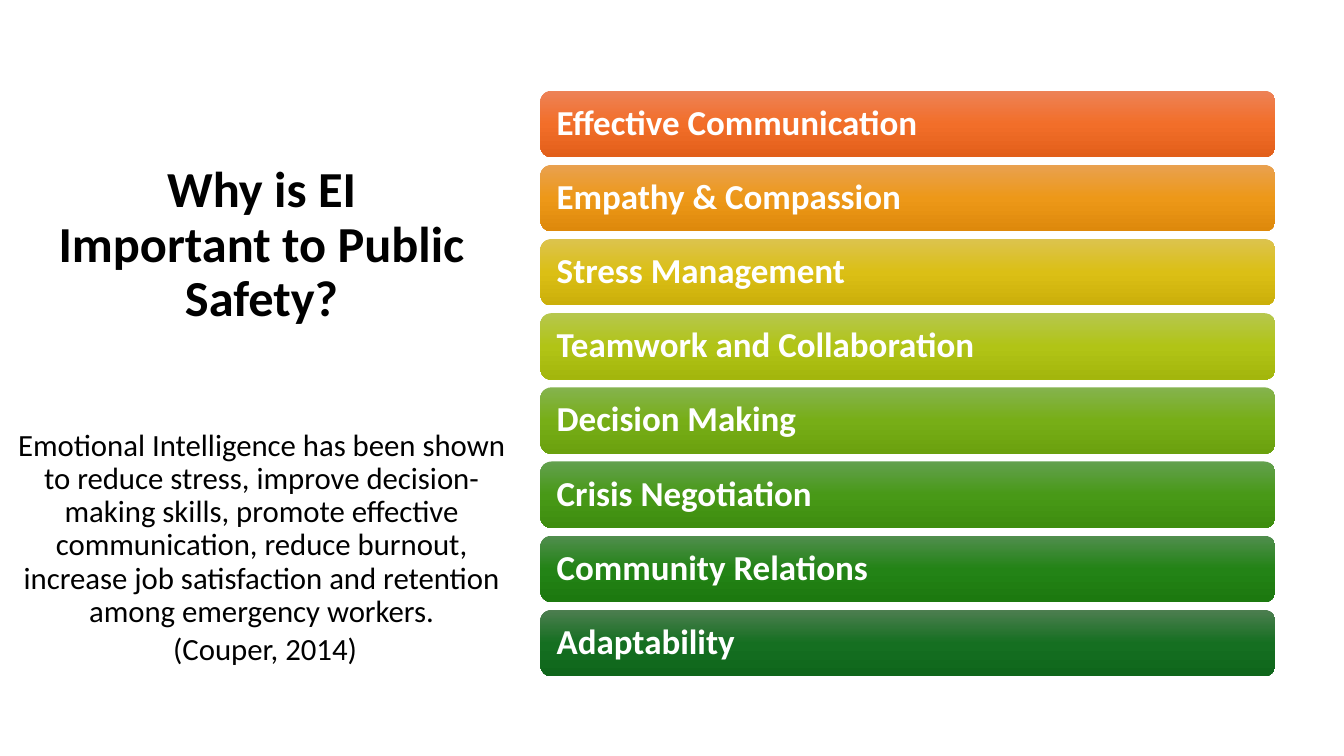
from copy import deepcopy
from dataclasses import dataclass

from pptx import Presentation
from pptx import util as u
from pptx.dml.color import RGBColor
from pptx.enum import shapes, text
from pptx.oxml.ns import qn


@dataclass(frozen=True)
class Theme:
    font: str = "Calibri"
    ink: str = "000000"
    bar_ink: str = "FFFFFF"
    title_size: float = 36
    body_size: float = 22
    bar_size: float = 25
    line_spacing: float = 0.9


THEME = Theme()

TITLE = "Why is EI Important to Public Safety?"
BODY = [
    "Emotional Intelligence has been shown to reduce stress, improve "
    "decision-making skills, promote effective communication, reduce burnout, "
    "increase job satisfaction and retention among emergency workers.",
    " (Couper, 2014)",
]
# Label, then gradient colours from top to bottom
BENEFITS = [
    ("Effective Communication", ("ED8257", "F26E29", "E25F1A")),
    ("Empathy & Compassion", ("E9A150", "ED9818", "DE890B")),
    ("Stress Management", ("DCC34E", "DBBF15", "CBAF0A")),
    ("Teamwork and Collaboration", ("B6C74E", "B1C416", "A3B60C")),
    ("Decision Making", ("85B34E", "77AE17", "6BA10E")),
    ("Crisis Negotiation", ("63A04E", "489917", "3E8D0F")),
    ("Community Relations", ("518E4E", "238316", "1C790F")),
    ("Adaptability", ("4D7E50", "156F21", "0F661B")),
]


def write(shape, lines, *, size, color=THEME.ink, bold=False, after=0,
          align=text.PP_ALIGN.CENTER, anchor=text.MSO_ANCHOR.TOP, inset=0.1):
    """Fill a shape with one formatted paragraph per line."""
    frame = shape.text_frame
    frame.word_wrap = True
    frame.vertical_anchor = anchor
    frame.margin_left = frame.margin_right = u.Inches(inset)
    for index, line in enumerate(lines):
        para = frame.add_paragraph() if index else frame.paragraphs[0]
        para.alignment = align
        para.line_spacing = THEME.line_spacing
        para.space_after = u.Pt(after)
        span = para.add_run()
        span.text = line
        span.font.name = THEME.font
        span.font.size = u.Pt(size)
        span.font.bold = bold
        span.font.color.rgb = RGBColor.from_string(color)


def shade(shape, colors):
    """Apply an evenly spaced gradient running from top to bottom."""
    shape.fill.gradient()
    shape.fill.gradient_angle = 270
    stop_list = shape.fill.gradient_stops
    first = shape._element.spPr.find(".//" + qn("a:gs"))
    for _ in range(len(colors) - len(stop_list)):
        first.addnext(deepcopy(first))
    for index, (stop, color) in enumerate(zip(shape.fill.gradient_stops, colors)):
        stop.position = index / (len(colors) - 1)
        stop.color.rgb = RGBColor.from_string(color)


def add_text(page, box, lines, **style):
    write(page.shapes.add_textbox(*map(u.Inches, box)), lines, **style)


def add_message(page, box):
    """Left region: the question above, its answer below."""
    left, top, width, height = box
    add_text(page, (left + 0.43, top, 4.27, 2.85), [TITLE],
             size=THEME.title_size, bold=True, anchor=text.MSO_ANCHOR.BOTTOM)
    body_height = 0.4 * height
    add_text(page, (left, top + height - body_height, width, body_height), BODY,
             size=THEME.body_size, after=3.4)


def add_benefits(page, box):
    """Right region: equal bars stacked over the height of the box."""
    left, top, width, height = box
    bar_height = 0.66
    pitch = (height - bar_height) / (len(BENEFITS) - 1)
    for row, (label, colors) in enumerate(BENEFITS):
        bar = page.shapes.add_shape(
            shapes.MSO_SHAPE.ROUNDED_RECTANGLE,
            *map(u.Inches, (left, top + row * pitch, width, bar_height)))
        bar.shadow.inherit = False
        bar.line.fill.background()
        shade(bar, colors)
        write(bar, [label], size=THEME.bar_size, color=THEME.bar_ink, bold=True,
              align=text.PP_ALIGN.LEFT, anchor=text.MSO_ANCHOR.MIDDLE, inset=0.13)


def main():
    deck = Presentation()
    deck.slide_width, deck.slide_height = u.Inches(13.33), u.Inches(7.5)
    page = deck.slides.add_slide(deck.slide_layouts[6])
    add_message(page, (0.03, 0.45, 5.13, 6.27))
    add_benefits(page, (5.36, 0.9, 7.29, 5.81))
    deck.save("out.pptx")


if __name__ == "__main__":
    main()
